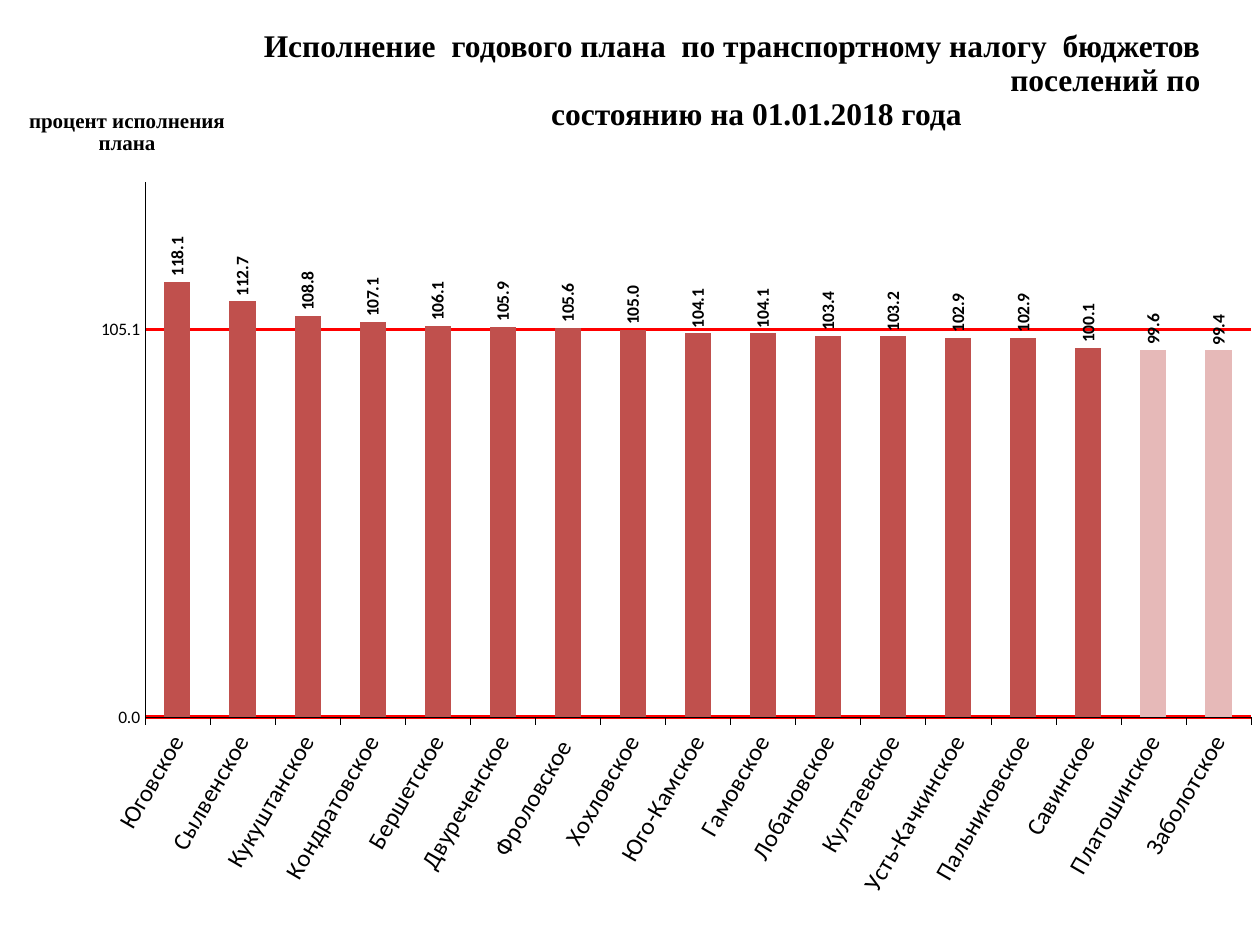
from pptx import Presentation
from pptx.chart.data import CategoryChartData
from pptx.dml.color import RGBColor
from pptx.enum.chart import (XL_CHART_TYPE as Kind, XL_LABEL_POSITION as Pos,
                             XL_TICK_MARK as Tick)
from pptx.enum.text import MSO_ANCHOR as Anchor, MSO_AUTO_SIZE as Fit, PP_ALIGN as Align
from pptx.oxml import parse_xml
from pptx.oxml.ns import nsdecls
from pptx.util import Cm, Pt

SERIF, SANS = "Times New Roman", "Calibri"
RED, PINK, BLACK = "C0504D", "E6B9B8", "000000"


def style(font, size, name=SANS, bold=False):
    font.name, font.size, font.bold = name, Pt(size), bold
    font.color.rgb = RGBColor.from_string(BLACK)


def layout(x, y, w=None, h=None):
    parts = '<c:xMode val="edge"/><c:yMode val="edge"/>'
    for key, val in (("x", x), ("y", y), ("w", w), ("h", h)):
        if val is not None:
            parts += f'<c:{key} val="{val}"/>'
    target = '<c:layoutTarget val="inner"/>' if w else ""
    return parse_xml(f'<c:layout {nsdecls("c")}><c:manualLayout>{target}{parts}'
                     '</c:manualLayout></c:layout>')


prs = Presentation()
prs.slide_width, prs.slide_height = Cm(25.4), Cm(19.05)
slide = prs.slides.add_slide(prs.slide_layouts[5])

# Title: three lines, each with its own alignment and indent
title = slide.shapes.title
title.left, title.top, title.width, title.height = Cm(4.4), Cm(0.6), Cm(19.8), Cm(2.2)
frame = title.text_frame
frame.auto_size, frame.word_wrap = Fit.NONE, True
frame.vertical_anchor = Anchor.TOP
frame.margin_left = frame.margin_right = frame.margin_top = frame.margin_bottom = 0
lines = [
    ("Исполнение  годового плана  по транспортному налогу  бюджетов", Align.RIGHT, 0),
    ("поселений по", Align.RIGHT, 0),
    ("состоянию на 01.01.2018 года", Align.CENTER, 1.9),
]
for i, (text, align, indent) in enumerate(lines):
    para = frame.add_paragraph() if i else frame.paragraphs[0]
    para.alignment, para.line_spacing = align, Pt(19.4)
    para.space_before = Pt(0)
    para._p.get_or_add_pPr().set("marL", str(Cm(indent)))
    run = para.add_run()
    run.text = text
    style(run.font, 18, SERIF, True)

# Chart data
rows = [
    ("Юговское", 118.1), ("Сылвенское", 112.7), ("Кукуштанское", 108.8),
    ("Кондратовское", 107.1), ("Бершетское", 106.1), ("Двуреченское", 105.9),
    ("Фроловское ", 105.6), ("Хохловское", 105.0), ("Юго-Камское", 104.1),
    ("Гамовское", 104.1), ("Лобановское", 103.4), ("Култаевское", 103.2),
    ("Усть-Качкинское", 102.9), ("Пальниковское", 102.9), ("Савинское", 100.1),
    ("Платошинское", 99.6), ("Заболотское", 99.4),
]
data = CategoryChartData(number_format="0.0")
data.categories = [name for name, val in rows]
data.add_series("Series 1", [val for name, val in rows])
chart = slide.shapes.add_chart(Kind.COLUMN_CLUSTERED, 0, 0, prs.slide_width,
                               prs.slide_height, data).chart
chart.has_title = chart.has_legend = False
style(chart.font, 10)
area = chart._chartSpace.chart.plotArea
for old in area.findall(layout(0, 0).tag):
    area.remove(old)
area.insert(0, layout(0.115, 0.193, 0.878, 0.566))

# Columns: those below 100 percent are pale
plot = chart.plots[0]
plot.gap_width, plot.vary_by_categories = 150, False
bars = plot.series[0]
bars.format.fill.solid()
bars.format.fill.fore_color.rgb = RGBColor.from_string(RED)
for i, (name, val) in enumerate(rows):
    if val < 100:
        fill = bars.points[i].format.fill
        fill.solid()
        fill.fore_color.rgb = RGBColor.from_string(PINK)

# Upright value labels
plot.has_data_labels = True
labels = plot.data_labels
labels.show_value, labels.position = True, Pos.OUTSIDE_END
labels.number_format, labels.number_format_is_linked = "#,##0.0", False
style(labels.font, 10, bold=True)
labels._element.txPr.bodyPr.set("rot", "-5400000")

# Axes
cat, val = chart.category_axis, chart.value_axis
for axis, size, tick in ((cat, 14, Tick.OUTSIDE), (val, 10, Tick.NONE)):
    style(axis.tick_labels.font, size)
    axis.major_tick_mark, axis.minor_tick_mark = tick, Tick.NONE
    axis.format.line.width = Pt(0.25)
    axis.format.line.color.rgb = RGBColor.from_string(BLACK)
cat._element.txPr.bodyPr.set("rot", "-3600000")
val.minimum_scale, val.maximum_scale, val.major_unit = 0, 145, 105.1
val.tick_labels.number_format = "0.0"
val.tick_labels.number_format_is_linked = False
val.has_major_gridlines = True
grid = val.major_gridlines.format.line
grid.width, grid.color.rgb = Pt(2), RGBColor.from_string("FF0000")

# Value axis title, level, above the axis
head = val.axis_title
frame = head.text_frame
for i, text in enumerate(["процент исполнения", "плана"]):
    para = frame.add_paragraph() if i else frame.paragraphs[0]
    run = para.add_run()
    run.text = text
    style(run.font, 12, SERIF, True)
frame._txBody.bodyPr.set("rot", "0")
for old in head._element.findall(layout(0, 0).tag):
    head._element.remove(old)
head._element.tx.addnext(layout(0.02, 0.11))

prs.save("out.pptx")
